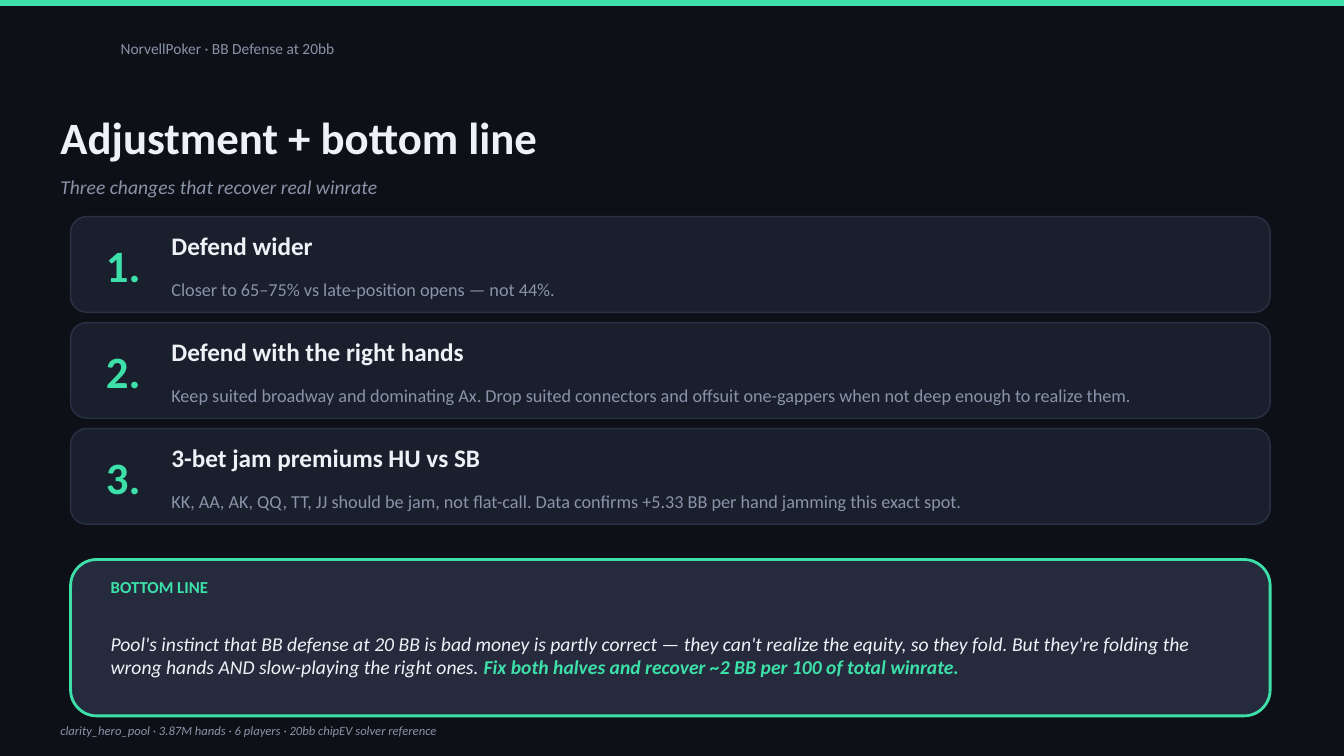
from pptx import Presentation
from pptx.dml.color import RGBColor
from pptx.enum.shapes import MSO_SHAPE
from pptx.enum.text import MSO_ANCHOR, MSO_AUTO_SIZE, PP_ALIGN
from pptx.util import Cm, Pt

WIDTH, HEIGHT = 33.87, 19.05
MINT, WHITE, GREY = "3DE0A8", "EEF2F7", "8A93A8"
NIGHT, CARD, EDGE, PANEL = "0E1018", "1A1F2E", "2B3145", "252B3D"

STEPS = [
    ("Defend wider", "Closer to 65–75% vs late-position opens — not 44%."),
    ("Defend with the right hands",
     "Keep suited broadway and dominating Ax. Drop suited connectors and "
     "offsuit one-gappers when not deep enough to realize them."),
    ("3-bet jam premiums HU vs SB",
     "KK, AA, AK, QQ, TT, JJ should be jam, not flat-call. "
     "Data confirms +5.33 BB per hand jamming this exact spot."),
]


def color(code):
    return RGBColor.from_string(code)


def write(shape, *runs):
    """Fill a shape with runs of (text, size, colour, bold, italic)."""
    frame = shape.text_frame
    frame.word_wrap = True
    frame.auto_size = MSO_AUTO_SIZE.NONE
    frame.vertical_anchor = MSO_ANCHOR.MIDDLE
    para = frame.paragraphs[0]
    para.alignment = PP_ALIGN.LEFT
    for text, size, code, bold, italic in runs:
        run = para.add_run()
        run.text = text
        font = run.font
        font.name, font.size = "Calibri", Pt(size)
        font.bold, font.italic = bold, italic
        font.color.rgb = color(code)


def label(slide, left, top, width, height, *runs):
    box = slide.shapes.add_textbox(Cm(left), Cm(top), Cm(width), Cm(height))
    write(box, *runs)


def block(slide, kind, left, top, width, height, fill, edge=None, weight=1):
    shape = slide.shapes.add_shape(
        kind, Cm(left), Cm(top), Cm(width), Cm(height))
    shape.shadow.inherit = False
    shape.fill.solid()
    shape.fill.fore_color.rgb = color(fill)
    if edge:
        shape.line.color.rgb = color(edge)
        shape.line.width = Pt(weight)
    else:
        shape.line.fill.background()


def frame(slide, width):
    """Draw the accent bar, running header and source line."""
    block(slide, MSO_SHAPE.RECTANGLE, 0, 0, width, 0.15, MINT)
    label(slide, 2.79, 0.64, 20.32, 1.14,
          ("NorvellPoker · BB Defense at 20bb", 11, GREY, False, False))
    label(slide, 1.27, 17.91, width - 2.63, 1.02,
          ("clarity_hero_pool · 3.87M hands · 6 players · "
           "20bb chipEV solver reference", 9, GREY, False, True))


def heading(slide, left, top, width):
    title = slide.shapes.title
    title.left, title.top = Cm(left), Cm(top)
    title.width, title.height = Cm(width), Cm(1.78)
    write(title, ("Adjustment + bottom line", 32, WHITE, True, False))
    label(slide, left, top + 1.65, width, 1.02,
          ("Three changes that recover real winrate", 14, GREY, False, True))


def step(slide, left, top, width, height, number, head, body):
    block(slide, MSO_SHAPE.ROUNDED_RECTANGLE, left, top, width, height,
          CARD, EDGE)
    label(slide, left + 0.64, top, 1.52, height,
          (f"{number}.", 32, MINT, True, False))
    inner = width - 2.54
    label(slide, left + 2.29, top + 0.15, inner, 1.14,
          (head, 18, WHITE, True, False))
    label(slide, left + 2.29, top + 1.27, inner, 1.14,
          (body, 13, GREY, False, False))


def verdict(slide, left, top, width, height):
    block(slide, MSO_SHAPE.ROUNDED_RECTANGLE, left, top, width, height,
          PANEL, MINT, 2)
    inner = width - 1.53
    label(slide, left + 0.76, top + 0.25, inner, 0.89,
          ("BOTTOM LINE", 12, MINT, True, False))
    label(slide, left + 0.76, top + 1.14, inner, 2.54,
          ("Pool's instinct that BB defense at 20 BB is bad money is partly "
           "correct — they can't realize the equity, so they fold. But "
           "they're folding the wrong hands AND slow-playing the right "
           "ones. ", 14, WHITE, False, True),
          ("Fix both halves and recover ~2 BB per 100 of total winrate.",
           14, MINT, True, True))


def main():
    deck = Presentation()
    deck.slide_width, deck.slide_height = Cm(WIDTH), Cm(HEIGHT)
    slide = deck.slides.add_slide(deck.slide_layouts[5])
    slide.background.fill.solid()
    slide.background.fill.fore_color.rgb = color(NIGHT)
    frame(slide, WIDTH)
    heading(slide, 1.27, 2.54, 31.24)
    left, top, width, high, gap = 1.78, 5.46, 30.23, 2.41, 0.26
    for index, (head, body) in enumerate(STEPS):
        step(slide, left, top + index * (high + gap), width, high,
             index + 1, head, body)
    verdict(slide, left, 14.1, width, 3.94)
    deck.save("out.pptx")


if __name__ == "__main__":
    main()
